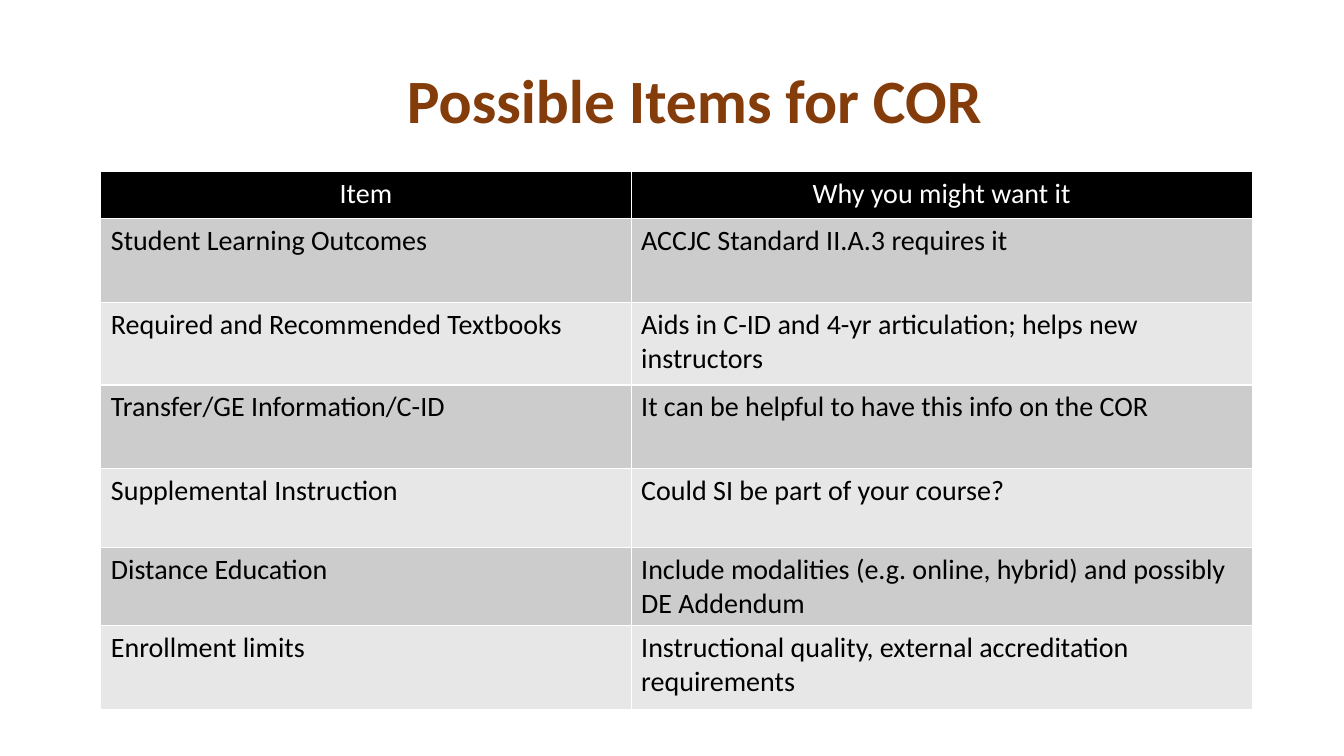
from pptx import Presentation
from pptx.dml.color import RGBColor as RGB
from pptx.enum.text import MSO_ANCHOR as Anchor, PP_ALIGN as Align
from pptx.oxml import parse_xml
from pptx.oxml.ns import nsdecls
from pptx.util import Inches, Pt

HUES = {"title": "843C0B", "head": "000000", "odd": "CCCCCC",
        "even": "E7E7E7", "light": "FFFFFF", "dark": "000000"}
ROWS = [
    ("Item", "Why you might want it"),
    ("Student Learning Outcomes", "ACCJC Standard II.A.3 requires it"),
    ("Required and Recommended Textbooks",
     "Aids in C-ID and 4-yr articulation; helps new instructors"),
    ("Transfer/GE Information/C-ID", "It can be helpful to have this info on the COR"),
    ("Supplemental Instruction", "Could SI be part of your course?"),
    ("Distance Education",
     "Include modalities (e.g. online, hybrid) and possibly DE Addendum"),
    ("Enrollment limits", "Instructional quality, external accreditation requirements"),
]
WIDTHS = [5.26, 6.16]
HEIGHTS = [0.47, 0.83, 0.82, 0.83, 0.78, 0.78, 0.83]


def style(para, text, size, hue, bold, align):
    para.text = text
    para.alignment = align
    font = para.runs[0].font
    for key, val in {"name": "Calibri", "size": Pt(size), "bold": bold}.items():
        setattr(font, key, val)
    font.color.rgb = RGB.from_string(HUES[hue])


deck = Presentation()
deck.slide_width, deck.slide_height = Inches(13.33), Inches(7.5)
slide = deck.slides.add_slide(deck.slide_layouts[6])

box = slide.shapes.add_textbox(Inches(3.04), Inches(0.36), Inches(7.7), Inches(1.34))
frame = box.text_frame
frame.word_wrap = True
frame.vertical_anchor = Anchor.MIDDLE
title = frame.paragraphs[0]
title.line_spacing = 0.9
style(title, "Possible Items for COR", 44, "title", True, Align.CENTER)

table = slide.shapes.add_table(len(ROWS), len(WIDTHS), Inches(1), Inches(1.7),
                               Inches(sum(WIDTHS)), Inches(sum(HEIGHTS))).table
table.first_row = table.horz_banding = False
for col, width in zip(table.columns, WIDTHS):
    col.width = Inches(width)

for r, (texts, height) in enumerate(zip(ROWS, HEIGHTS)):
    table.rows[r].height = Inches(height)
    band = "head" if r == 0 else "odd" if r % 2 else "even"
    hue, align = ("dark", Align.LEFT) if r else ("light", Align.CENTER)
    for c, text in enumerate(texts):
        cell = table.cell(r, c)
        style(cell.text_frame.paragraphs[0], text, 20, hue, False, align)
        props = cell._tc.get_or_add_tcPr()
        for side in ("lnL", "lnR", "lnT", "lnB"):
            props.append(parse_xml(
                f'<a:{side} {nsdecls("a")} w="{Pt(1)}"><a:solidFill>'
                f'<a:srgbClr val="{HUES["light"]}"/></a:solidFill></a:{side}>'))
        cell.fill.solid()
        cell.fill.fore_color.rgb = RGB.from_string(HUES[band])

deck.save("out.pptx")
